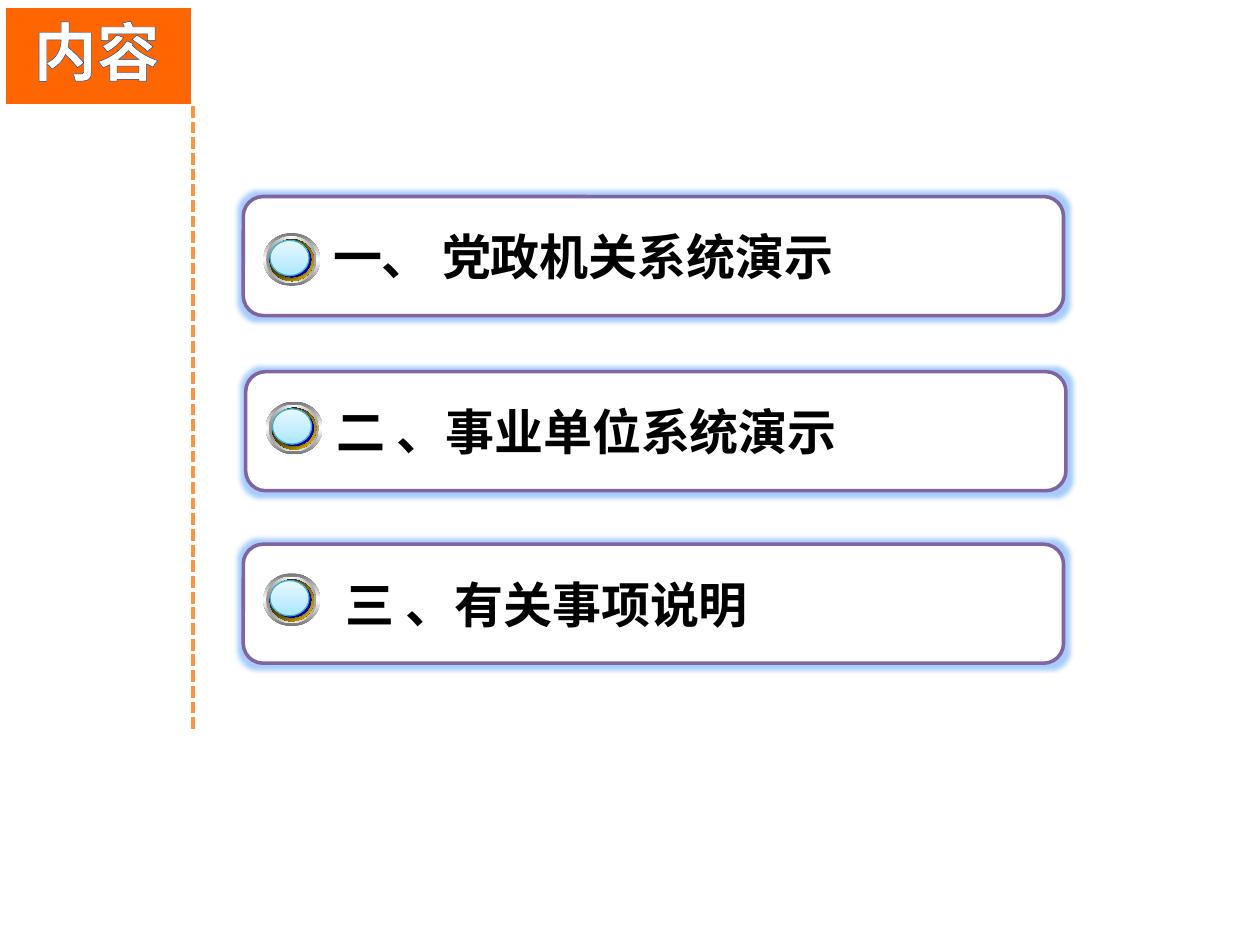
from dataclasses import dataclass
from lxml.etree import SubElement
from pptx import Presentation
from pptx.dml.color import RGBColor
from pptx.enum.dml import MSO_LINE
from pptx.enum.shapes import MSO_CONNECTOR, MSO_SHAPE
from pptx.enum.text import MSO_ANCHOR, PP_ALIGN
from pptx.oxml import parse_xml
from pptx.oxml.ns import nsdecls, qn
from pptx.slide import Slide
from pptx.util import Pt

HUES = {
    "white": "FFFFFF", "black": "000000", "orange": "FF6600", "dash": "F79646",
    "purple": "8064A2", "glow": "3C8CF5", "edge": "054697", "rim": "46AAC5",
    "steel": "767676", "silver": "A2A2A2", "blue": "0000FF", "navy": "0000C3",
    "gold": "FFCC00", "sky": "A7E6FF", "pale": "C1EDFF", "ice": "E7F8FF",
}
RINGS = [
    (0, 0, 32.4, 30.2, 90, [(0, "steel"), (50, "white"), (100, "steel")]),
    (1.6, 1.9, 28.8, 26.6, 0, [(0, "silver"), (50, "white"), (100, "silver")]),
    (3.6, 3.6, 25.2, 23.8, 45, [(0, "white"), (50, "blue"), (100, "white")]),
    (3.6, 3.6, 25.2, 23.8, 45, [(0, "black"), (100, "gold")]),
    (5, 5, 22.3, 20.2, 315, [(0, "navy"), (50, "blue"), (100, "navy")]),
    (3.8, 4.1, 22.3, 20.2, 270, [(0, "sky"), (35, "pale"), (100, "ice")]),
]
ITEMS = [
    (139, 112.3, 133.2, 48, "一、 党政机关系统演示"),
    (140.4, 212.4, 229.5, 48.5, "二 、事业单位系统演示"),
    (139, 311, 327.6, 55, "三 、有关事项说明"),
]


def tint(name):
    return RGBColor.from_string(HUES[name])


@dataclass
class Deck:
    slide: Slide
    face: str = "Noto Sans CJK SC"

    def shape(self, home, kind, x, y, w, h, fill=None, line=None, width=1):
        item = home.add_shape(kind, Pt(x), Pt(y), Pt(w), Pt(h))
        item.shadow.inherit = False
        if fill:
            item.fill.solid()
            item.fill.fore_color.rgb = tint(fill)
        else:
            item.fill.background()
        if line:
            item.line.color.rgb = tint(line)
            item.line.width = Pt(width)
        else:
            item.line.fill.background()
        return item

    def effect(self, item, tag, hue, alpha, **attrs):
        node = SubElement(item.element.spPr.find(qn("a:effectLst")), qn(tag),
                          {key: str(val) for key, val in attrs.items()})
        clr = SubElement(node, qn("a:srgbClr"), val=HUES[hue])
        SubElement(clr, qn("a:alpha"), val=str(alpha * 1000))

    def text(self, item, words, size, hue, left, anchor):
        frame = item.text_frame
        frame.word_wrap = True
        frame.vertical_anchor = anchor
        frame.margin_left = Pt(left)
        frame.margin_right = 0
        para = frame.paragraphs[0]
        para.alignment = PP_ALIGN.LEFT
        run = para.add_run()
        run.text = words
        font = para.font
        font.name = self.face
        font.size = Pt(size)
        font.bold = True
        font.color.rgb = tint(hue)
        SubElement(run.font._element, qn("a:ea"), typeface=self.face)
        return run

    def title(self, words):
        item = self.shape(self.slide.shapes, MSO_SHAPE.RECTANGLE,
                          2.2, 3.6, 108, 56.9, "orange", "white", 2.25)
        run = self.text(item, words, 36, "white", 17, MSO_ANCHOR.TOP)
        edge = parse_xml(
            f'<a:ln {nsdecls("a")} w="{Pt(1)}"><a:solidFill>'
            f'<a:srgbClr val="{HUES["edge"]}"/></a:solidFill></a:ln>')
        run.font._element.insert(0, edge)

    def rule(self, x, top, end):
        line = self.slide.shapes.add_connector(
            MSO_CONNECTOR.STRAIGHT, Pt(x), Pt(top), Pt(x), Pt(end))
        line.line.color.rgb = tint("dash")
        line.line.width = Pt(2.25)
        line.line.dash_style = MSO_LINE.SQUARE_DOT
        SubElement(line.element.spPr, qn("a:effectLst"))

    def panel(self, x, y, left, words):
        item = self.shape(self.slide.shapes, MSO_SHAPE.ROUNDED_RECTANGLE,
                          x, y, 468.7, 68, "white", "purple", 2)
        self.effect(item, "a:glow", "glow", 45, rad=Pt(5))
        self.text(item, words, 28, "black", left, MSO_ANCHOR.MIDDLE)

    def blend(self, item, angle, stops):
        marks = "".join(
            f'<a:gs pos="{pos * 1000}"><a:srgbClr val="{HUES[hue]}"/></a:gs>'
            for pos, hue in stops)
        grad = parse_xml(
            f'<a:gradFill {nsdecls("a")} rotWithShape="1"><a:gsLst>{marks}'
            f'</a:gsLst><a:lin ang="{angle * 60000}" scaled="1"/></a:gradFill>')
        props = item.element.spPr
        props.replace(props.find(qn("a:noFill")), grad)

    def bead(self, x, y):
        group = self.slide.shapes.add_group_shape()
        for dx, dy, w, h, angle, stops in RINGS:
            ring = self.shape(group.shapes, MSO_SHAPE.OVAL, x + dx, y + dy, w, h)
            self.blend(ring, angle, stops)
        ring.line.color.rgb = tint("rim")
        ring.line.width = Pt(0.75)
        self.effect(ring, "a:outerShdw", "black", 38, blurRad=Pt(3.1),
                    dist=Pt(1.6), dir=90 * 60000, rotWithShape=0)


def main():
    show = Presentation()
    show.slide_width = Pt(720)
    show.slide_height = Pt(540)
    deck = Deck(show.slides.add_slide(show.slide_layouts[6]))
    deck.title("内容")
    deck.rule(110.2, 60.5, 417.6)
    for x, top, dot, left, words in ITEMS:
        deck.panel(x, top, left, words)
        deck.bead(x + 11.5, dot)
    show.save("out.pptx")


if __name__ == "__main__":
    main()
